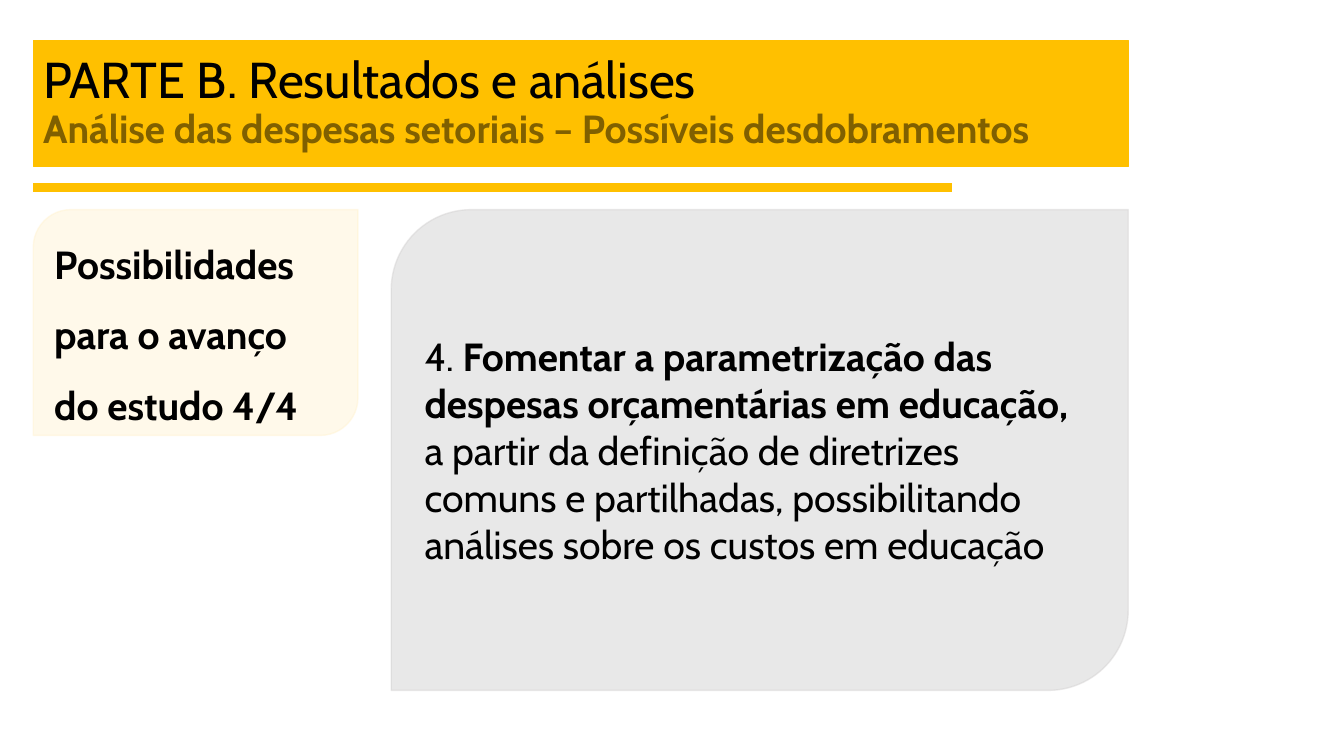
"""Build the slide on possible developments of the sector spending analysis."""
from dataclasses import dataclass

from lxml.etree import SubElement
from pptx import Presentation
from pptx.dml.color import RGBColor
from pptx.enum.shapes import MSO_CONNECTOR as CONN, MSO_SHAPE as SHAPE
from pptx.enum.text import MSO_ANCHOR as ANCHOR, PP_ALIGN as ALIGN
from pptx.oxml.ns import qn
from pptx.slide import Slide
from pptx.util import Inches, Pt

FONT = "Cabin"
BLACK = RGBColor(0x00, 0x00, 0x00)
AMBER = RGBColor(0xFF, 0xC0, 0x00)
BROWN = RGBColor(0x80, 0x60, 0x00)
CREAM = RGBColor(0xFF, 0xF2, 0xCC)
GREY = RGBColor(0xC9, 0xC9, 0xC9)
GREY_EDGE = RGBColor(0xD0, 0xCE, 0xCE)
LEFT = 0.33


@dataclass(frozen=True)
class Run:
    text: str
    bold: bool = False
    size: int = 28
    color: RGBColor = BLACK
    break_after: bool = False


@dataclass(frozen=True)
class Panel:
    box: tuple[float, float, float, float]
    fill: RGBColor
    edge: RGBColor
    runs: tuple[Run, ...]
    shape: SHAPE = SHAPE.ROUND_2_DIAG_RECTANGLE
    edge_width: float = 1
    opacity: int = 41
    line_spacing: float = 1.0
    space_before: int = 12


PANELS = (
    Panel((LEFT, 2.08, 3.22, 2.24), CREAM, CREAM,
          (Run("Possibilidades para o avanço do estudo 4/4", bold=True),),
          line_spacing=1.5),
    Panel((3.88, 2.08, 7.31, 4.77), GREY, GREY_EDGE,
          (Run("4. "),
           Run("Fomentar a parametrização das despesas orçamentárias em educação, ", bold=True),
           Run("a partir da definição de diretrizes comuns e partilhadas, "
               "possibilitando análises sobre os custos em educação"))),
    Panel((LEFT, 0.4, 10.86, 1.25), AMBER, AMBER,
          (Run("PARTE B. Resultados e análises", size=36, break_after=True),
           Run("Análise das despesas setoriais – Possíveis desdobramentos", bold=True, color=BROWN)),
          shape=SHAPE.RECTANGLE, edge_width=0.75, opacity=100,
          line_spacing=0.9, space_before=0),
)


def add_rule(s: Slide) -> None:
    """Draw the amber rule below the title."""
    rule = s.shapes.add_connector(CONN.STRAIGHT, Inches(LEFT), Inches(1.86), Inches(9.44), Inches(1.86))
    rule.line.color.rgb = AMBER
    rule.line.width = Pt(6)
    SubElement(rule._element.spPr, qn("a:effectLst"))


def add_panel(s: Slide, panel: Panel) -> None:
    """Draw one filled panel with its text."""
    sp = s.shapes.add_shape(panel.shape, *map(Inches, panel.box))
    sp.shadow.inherit = False
    sp.fill.solid()
    sp.fill.fore_color.rgb = panel.fill
    sp.line.color.rgb = panel.edge
    sp.line.width = Pt(panel.edge_width)
    if panel.opacity < 100:
        for color in sp._element.spPr.iter(qn("a:srgbClr")):
            SubElement(color, qn("a:alpha"), val=str(panel.opacity * 1000))
    tf = sp.text_frame
    tf.word_wrap = True
    tf.vertical_anchor = ANCHOR.MIDDLE
    p = tf.paragraphs[0]
    p.alignment = ALIGN.LEFT
    p.line_spacing = panel.line_spacing
    p.space_before = Pt(panel.space_before)
    for run in panel.runs:
        r = p.add_run()
        r.text = run.text
        r.font.name = FONT
        r.font.size = Pt(run.size)
        r.font.bold = run.bold
        r.font.color.rgb = run.color
        if run.break_after:
            p.add_line_break()


def main() -> None:
    """Create and save the presentation."""
    prs = Presentation()
    prs.slide_width, prs.slide_height = Inches(13.33), Inches(7.5)
    s = prs.slides.add_slide(prs.slide_layouts[6])
    add_rule(s)
    for panel in PANELS:
        add_panel(s, panel)
    prs.save("out.pptx")


if __name__ == "__main__":
    main()
